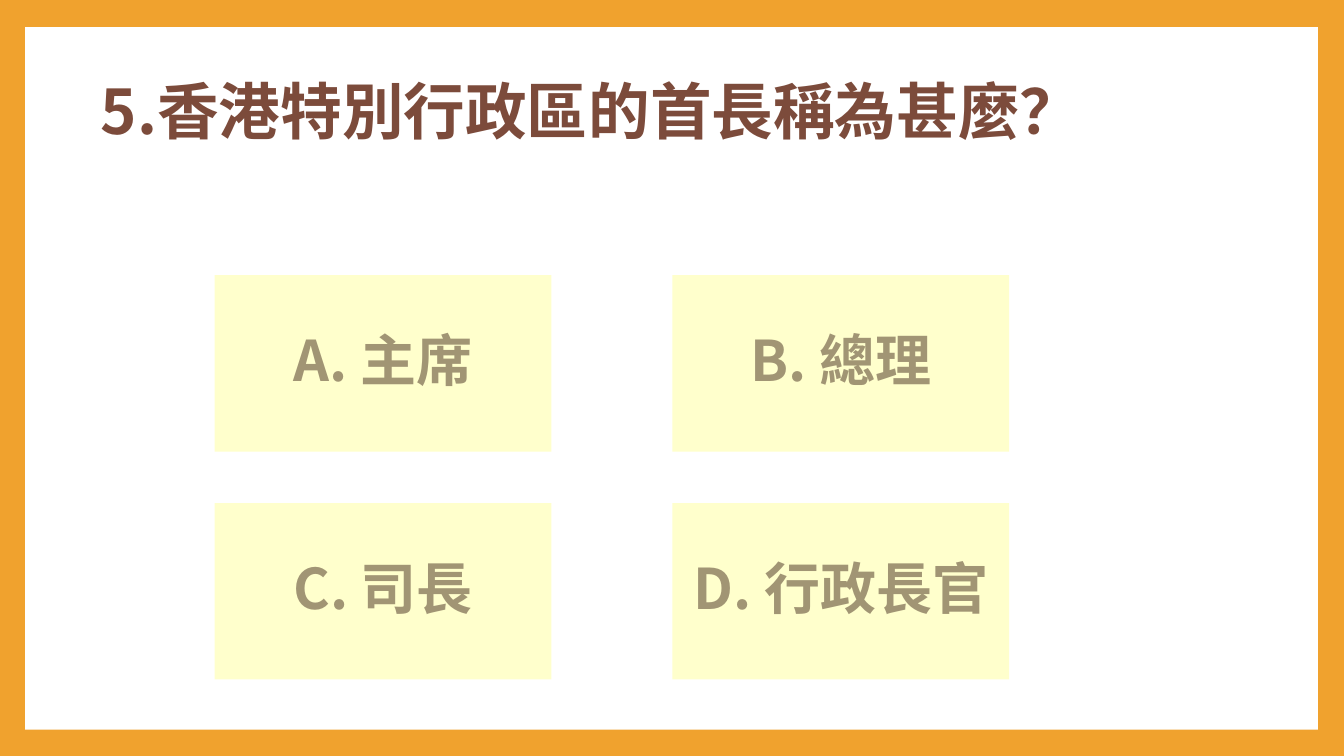
from dataclasses import dataclass

from lxml.etree import SubElement
from pptx import Presentation
from pptx.dml.color import RGBColor
from pptx.dml.fill import FillFormat
from pptx.enum.shapes import MSO_SHAPE
from pptx.enum.text import MSO_ANCHOR, MSO_AUTO_SIZE, PP_ALIGN
from pptx.oxml.ns import qn
from pptx.shapes.autoshape import Shape
from pptx.slide import Slide
from pptx.util import Inches, Pt

FONT = "Noto Sans CJK SC"
LEFT, TOP = 2.13, 2.73
STEP_X, STEP_Y = 4.54, 2.26
WIDE, HIGH = 3.34, 1.75


@dataclass
class Choice:
    text: str
    col: int
    row: int


CHOICES = [
    Choice("A. 主席", 0, 0),
    Choice("B. 總理", 1, 0),
    Choice("C. 司長", 0, 1),
    Choice("D. 行政長官", 1, 1),
]


def paint(fill: FillFormat, color: str) -> None:
    fill.solid()
    fill.fore_color.rgb = RGBColor.from_string(color)


def add_box(slide: Slide, left: float, top: float, width: float,
            height: float, color: str) -> Shape:
    box = slide.shapes.add_shape(
        MSO_SHAPE.RECTANGLE,
        Inches(left), Inches(top), Inches(width), Inches(height))
    box.shadow.inherit = False
    box.line.fill.background()
    paint(box.fill, color)
    return box


def set_text(shape: Shape, text: str, size: int, color: str,
             align: PP_ALIGN, before: int) -> None:
    frame = shape.text_frame
    frame.text = text
    frame.word_wrap = True
    frame.auto_size = MSO_AUTO_SIZE.NONE
    frame.vertical_anchor = MSO_ANCHOR.MIDDLE
    para = frame.paragraphs[0]
    para.alignment = align
    para.line_spacing = 0.9
    para.space_before = Pt(before)
    font = para.font
    font.size = Pt(size)
    font.bold = True
    paint(font.fill, color)
    font.name = FONT
    # Chinese glyphs take their typeface from a:ea
    props = para._p.pPr.find(qn("a:defRPr"))
    SubElement(props, qn("a:ea"), typeface=FONT)


def main() -> None:
    deck = Presentation()
    deck.slide_width, deck.slide_height = Inches(13.33), Inches(7.5)
    slide = deck.slides.add_slide(deck.slide_layouts.get_by_name("Title Only"))
    paint(slide.background.fill, "F0A22E")

    title = slide.shapes.title
    panel = add_box(slide, 0.25, 0.27, 12.82, 6.97, "FFFFFF")
    title.element.addprevious(panel.element)
    title.left, title.top = Inches(0.9), Inches(0.31)
    title.width, title.height = Inches(11.72), Inches(1.65)
    set_text(title, "5.香港特別行政區的首長稱為甚麼？", 44, "7C4B3B",
             PP_ALIGN.LEFT, 0)

    for choice in CHOICES:
        box = add_box(slide, LEFT + choice.col * STEP_X,
                      TOP + choice.row * STEP_Y, WIDE, HIGH, "FFFFCC")
        set_text(box, choice.text, 40, "A19574", PP_ALIGN.CENTER, 14)

    deck.save("out.pptx")


if __name__ == "__main__":
    main()
